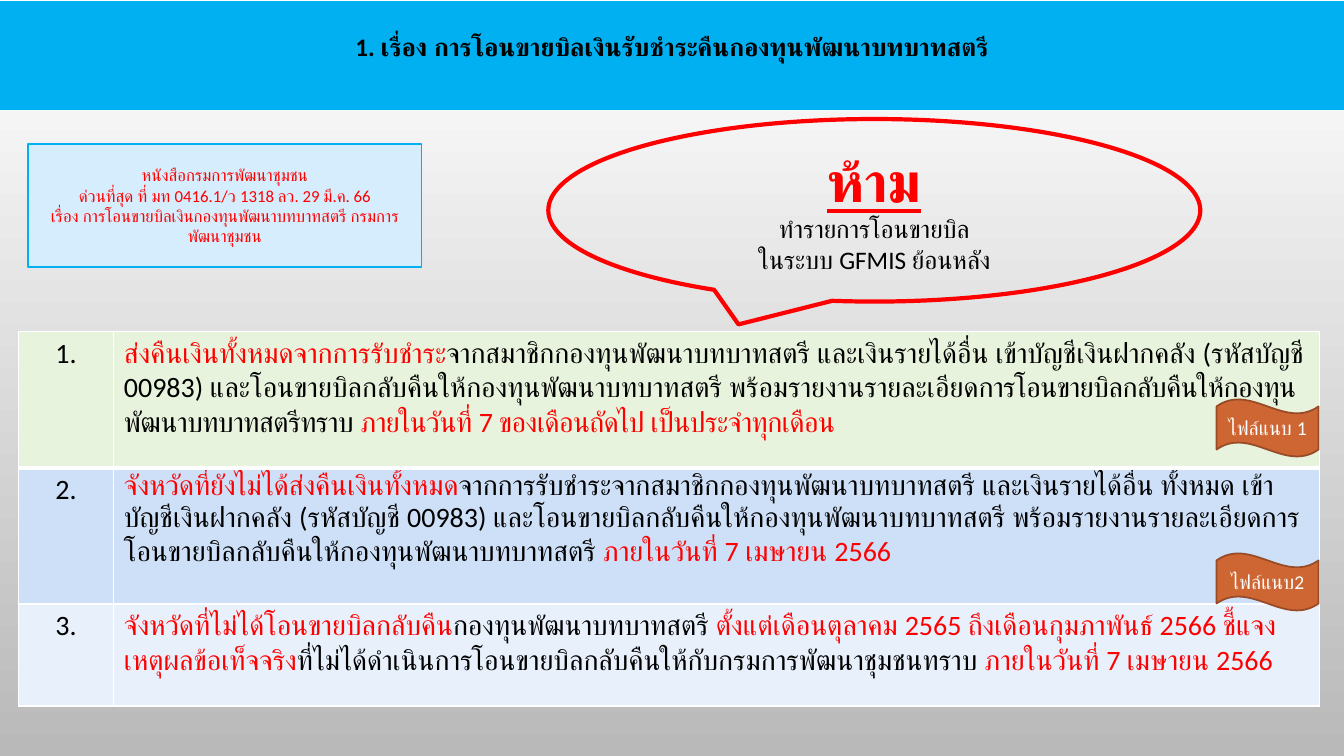
from dataclasses import dataclass
from lxml.etree import SubElement
from pptx import Presentation
from pptx.dml.color import RGBColor
from pptx.enum.shapes import MSO_SHAPE as Shape
from pptx.enum.text import MSO_ANCHOR as Anchor, PP_ALIGN as Align
from pptx.oxml import parse_xml
from pptx.oxml.ns import nsdecls, qn
from pptx.util import Cm, Pt


@dataclass(frozen=True)
class Theme:
    font: str = "Calibri"
    black: str = "000000"
    white: str = "FFFFFF"
    red: str = "FF0000"
    blue: str = "00B0F0"
    pale_blue: str = "D5EDFC"
    orange: str = "CE6633"
    brown: str = "984B26"
    shade: str = "B9B9B9"
    rows: tuple = ("E7F3DD", "CDE0F8", "E8F0FC")
    shout: int = 40
    table: int = 20
    body: int = 18
    tag: int = 14
    note: int = 12


def rgb(value):
    return RGBColor.from_string(value)


class SlideBuilder:
    def __init__(self, page, theme):
        self.page = page
        self.theme = theme

    def background(self, top, bottom):
        fill = self.page.background.fill
        fill.gradient()
        fill.gradient_angle = 270
        for stop, color, position in zip(fill.gradient_stops, (top, bottom), (0, 1)):
            stop.color.rgb = rgb(color)
            stop.position = position

    def style(self, font, size, color=None, bold=False, underline=False):
        font.name = self.theme.font
        font.size = Pt(size)
        font.bold = bold
        font.underline = underline
        if color:
            font.color.rgb = rgb(color)

    def shape(self, kind, place, lines, fill=None, line=None, weight=1):
        box = self.page.shapes.add_shape(kind, *map(Cm, place))
        box.shadow.inherit = False
        if fill:
            box.fill.solid()
            box.fill.fore_color.rgb = rgb(fill)
        else:
            box.fill.background()
        if line:
            box.line.color.rgb = rgb(line)
            box.line.width = Pt(weight)
        else:
            box.line.fill.background()
        frame = box.text_frame
        frame.word_wrap = True
        frame.vertical_anchor = Anchor.MIDDLE
        for index, (text, *look) in enumerate(lines):
            para = frame.add_paragraph() if index else frame.paragraphs[0]
            para.alignment = Align.CENTER
            para.add_run().text = text
            self.style(para.font, *look)
        return box

    def cell(self, cell, spans, fill, bottom, align):
        cell.fill.solid()
        cell.fill.fore_color.rgb = rgb(fill)
        self.borders(cell, bottom)
        para = cell.text_frame.paragraphs[0]
        para.alignment = align
        self.style(para.font, self.theme.table)
        for text, color, spacing in spans:
            span = para.add_run()
            span.text = text
            span.font.color.rgb = rgb(color)
            if spacing:
                span.font._element.set("spc", str(spacing))

    def borders(self, cell, bottom):
        properties = cell._tc.get_or_add_tcPr()
        for index, (side, weight) in enumerate(zip("LRTB", (1, 1, 1, bottom))):
            edge = parse_xml(f'<a:ln{side} {nsdecls("a")} w="{Pt(weight)}"/>')
            fill = SubElement(edge, qn("a:solidFill"))
            SubElement(fill, qn("a:srgbClr"), val=self.theme.white)
            properties.insert(index, edge)

    def table(self, place, widths, heights, items):
        grid = self.page.shapes.add_table(len(items), len(widths), *map(Cm, place)).table
        for column, width in zip(grid.columns, widths):
            column.width = Cm(width)
        for index, (spans, height, fill) in enumerate(zip(items, heights, self.theme.rows)):
            grid.rows[index].height = Cm(height)
            bottom = 1 if index else 3
            number = [(f"{index + 1}.", self.theme.black, 0)]
            self.cell(grid.cell(index, 0), number, fill, bottom, Align.CENTER)
            self.cell(grid.cell(index, 1), spans, fill, bottom, Align.LEFT)


def main():
    deck = Presentation()
    deck.slide_width, deck.slide_height = Cm(33.87), Cm(19.05)
    theme = Theme()
    red, black = theme.red, theme.black
    builder = SlideBuilder(deck.slides.add_slide(deck.slide_layouts[6]), theme)
    builder.background(theme.white, theme.shade)

    header = builder.shape(
        Shape.RECTANGLE, (0, 0.03, 33.87, 2.74),
        [("1. เรื่อง การโอนขายบิลเงินรับชำระคืนกองทุนพัฒนาบทบาทสตรี", theme.body, black, True)],
        theme.blue)
    header.text_frame.vertical_anchor = Anchor.TOP
    header.text_frame.margin_top = Cm(0.76)

    deadline = "ภายในวันที่ 7 เมษายน 2566"
    builder.table((0.46, 8.36, 32.79, 9.43), (2.41, 30.38), (3.43, 3.43, 2.57), [
        [("ส่งคืนเงินทั้งหมดจากการรับชำระ", red, 0),
         ("จากสมาชิกกองทุนพัฒนาบทบาทสตรี และเงินรายได้อื่น เข้าบัญชีเงินฝากคลัง "
          "(รหัสบัญชี 00983) และโอนขายบิลกลับคืนให้กองทุนพัฒนาบทบาทสตรี "
          "พร้อมรายงานรายละเอียด", black, 0),
         ("การโอนขายบิลกลับคืนให้กองทุนพัฒนาบทบาทสตรีทราบ ", black, -30),
         ("ภายในวันที่ 7 ของเดือนถัดไป เป็นประจำทุกเดือน", red, -30)],
        [("จังหวัดที่ยังไม่ได้ส่งคืนเงินทั้งหมด", red, 0),
         ("จากการรับชำระจากสมาชิกกองทุนพัฒนาบทบาทสตรี และเงินรายได้อื่น ทั้งหมด "
          "เข้าบัญชีเงินฝากคลัง (รหัสบัญชี 00983) และโอนขายบิลกลับคืนให้กองทุนพัฒนาบทบาทสตรี "
          "พร้อมรายงานรายละเอียดการโอนขายบิลกลับคืนให้กองทุนพัฒนาบทบาทสตรี ", black, 0),
         (deadline, red, 0)],
        [("จังหวัดที่ไม่ได้โอนขายบิลกลับคืน", red, 0),
         ("กองทุนพัฒนาบทบาทสตรี ", black, 0),
         ("ตั้งแต่เดือนตุลาคม 2565 ถึงเดือนกุมภาพันธ์ 2566 ชี้แจงเหตุผลข้อเท็จจริง", red, 0),
         ("ที่ไม่ได้ดำเนินการโอนขายบิลกลับคืนให้กับกรมการพัฒนาชุมชนทราบ ", black, 0),
         (deadline, red, 0)],
    ])

    builder.shape(
        Shape.OVAL_CALLOUT, (13.82, 3, 16.43, 4.6),
        [("ห้าม", theme.shout, red, True, True),
         ("ทำรายการโอนขายบิล", theme.body, black),
         ("ในระบบ GFMIS ย้อนหลัง", theme.body, black)],
        line=red, weight=3)

    letter = ("หนังสือกรมการพัฒนาชุมชน",
              "ด่วนที่สุด ที่ มท 0416.1/ว 1318 ลว. 29 มี.ค. 66",
              "เรื่อง การโอนขายบิลเงินกองทุนพัฒนาบทบาทสตรี กรมการพัฒนาชุมชน")
    builder.shape(
        Shape.RECTANGLE, (0.71, 3.63, 9.91, 3.1),
        [(text, theme.note, red) for text in letter],
        theme.pale_blue, theme.blue)

    for top, label in ((10.06, "ไฟล์แนบ 1"), (13.94, "ไฟล์แนบ2")):
        builder.shape(
            Shape.WAVE, (30.66, top, 2.57, 1.45), [(label, theme.tag, theme.white)],
            theme.orange, theme.brown, 1.25)

    deck.save("out.pptx")


if __name__ == "__main__":
    main()
